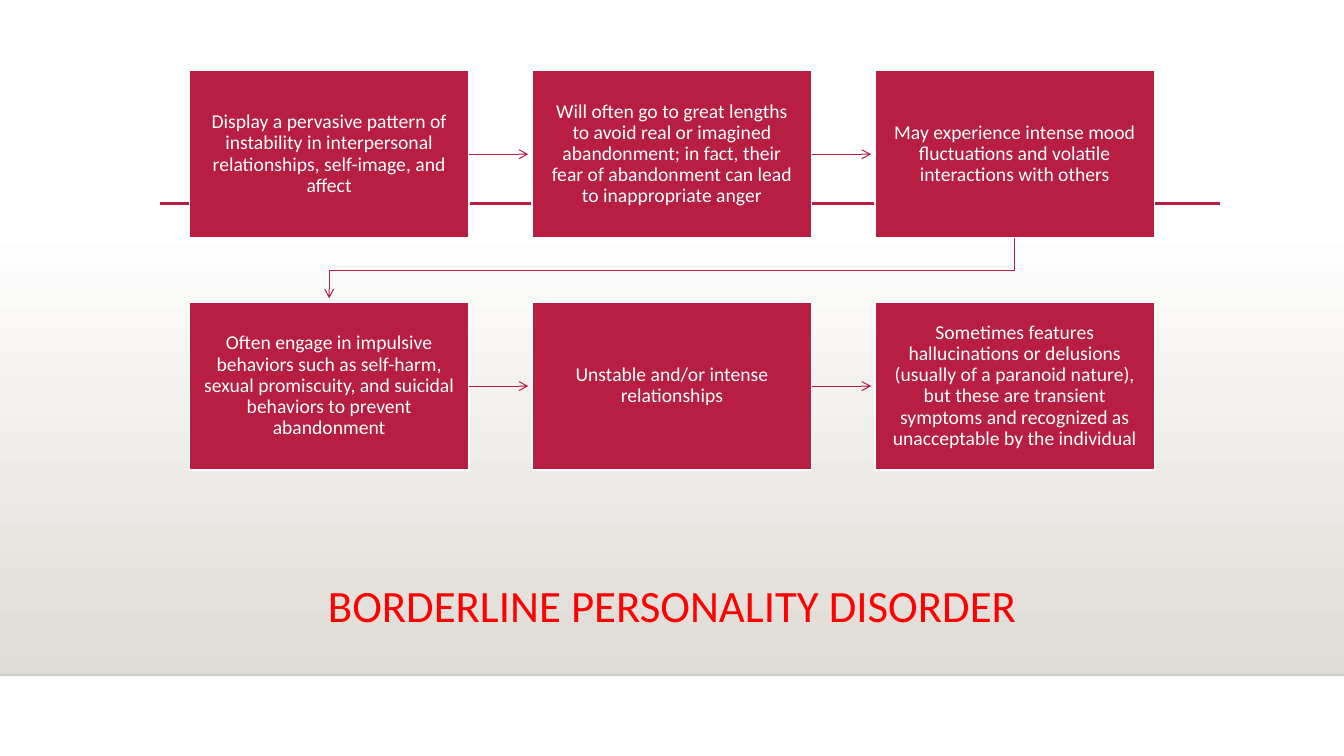
from lxml import etree
from pptx import Presentation
from pptx.dml.color import RGBColor
from pptx.enum.shapes import MSO_CONNECTOR as Connector, MSO_SHAPE as Shape
from pptx.enum.text import MSO_ANCHOR as Anchor, PP_ALIGN as Align
from pptx.oxml.ns import qn
from pptx.util import Inches, Pt

COLORS = {"crimson": "B71E42", "white": "FFFFFF", "stone": "DFDBD5",
          "edge": "000001", "title": "FF0000"}
FONT = "Calibri"
WIDTH, HEIGHT = 13.33, 7.5

# Grid of boxes
LEFT, TOP = 1.88, 0.7
COLUMN_STEP, ROW_STEP = 3.4, 2.3
BOX_WIDTH, BOX_HEIGHT = 2.77, 1.66
ARROW_GAP = 0.04
FLOOR = 6.7

FEATURES = [
    ["Display a pervasive pattern of instability in interpersonal "
     "relationships, self-image, and affect",
     "Will often go to great lengths to avoid real or imagined abandonment; "
     "in fact, their fear of abandonment can lead to inappropriate anger",
     "May experience intense mood fluctuations and volatile interactions "
     "with others"],
    ["Often engage in impulsive behaviors such as self-harm, sexual "
     "promiscuity, and suicidal behaviors to prevent abandonment",
     "Unstable and/or intense relationships",
     "Sometimes features hallucinations or delusions (usually of a paranoid "
     "nature), but these are transient symptoms and recognized as "
     "unacceptable by the individual"],
]


def color(name):
    return RGBColor.from_string(COLORS[name])


def style_line(line, name, width):
    line.color.rgb = color(name)
    line.width = Pt(width)


def add_arrowhead(line):
    outline = line._get_or_add_ln()
    etree.SubElement(outline, qn("a:tailEnd"), type="arrow")


def write(shape, text, size, name):
    shape.text_frame.word_wrap = True
    para = shape.text_frame.paragraphs[0]
    para.text = text
    para.alignment = Align.CENTER
    para.line_spacing = 0.9
    para.font.name = FONT
    para.font.size = Pt(size)
    para.font.color.rgb = color(name)


def add_line(page, start, end, name, width):
    line = page.shapes.add_connector(
        Connector.STRAIGHT, *(Inches(value) for value in (*start, *end)))
    etree.SubElement(line._element.spPr, qn("a:effectLst"))
    style_line(line.line, name, width)
    return line


def add_backdrop(page):
    top = 2.21
    floor = page.shapes.add_shape(
        Shape.RECTANGLE, 0, Inches(top), Inches(WIDTH), Inches(FLOOR - top))
    floor.shadow.inherit = False
    floor.line.fill.background()
    floor.fill.gradient()
    floor.fill.gradient_angle = 270
    for stop, name in zip(floor.fill.gradient_stops, ("white", "stone")):
        stop.color.rgb = color(name)

    edge = add_line(page, (0, FLOOR), (WIDTH, FLOOR), "edge", 1)
    tint = edge.line._get_or_add_ln().find(".//" + qn("a:srgbClr"))
    etree.SubElement(tint, qn("a:alpha"), val="20000")
    add_line(page, (1.59, 2.02), (12.1, 2.02), "crimson", 2.5)


def add_title(page, text):
    box = page.shapes.add_textbox(
        Inches(1.17), Inches(5.74), Inches(11), Inches(1.13))
    write(box, text, 32, "title")


def add_box(page, column, row, text):
    box = page.shapes.add_shape(
        Shape.RECTANGLE,
        Inches(LEFT + column * COLUMN_STEP), Inches(TOP + row * ROW_STEP),
        Inches(BOX_WIDTH), Inches(BOX_HEIGHT))
    box.shadow.inherit = False
    box.fill.solid()
    box.fill.fore_color.rgb = color("crimson")
    style_line(box.line, "white", 1.25)
    frame = box.text_frame
    frame.vertical_anchor = Anchor.MIDDLE
    frame.margin_left = frame.margin_right = Inches(0.14)
    frame.margin_top = frame.margin_bottom = Inches(0.14)
    write(box, text, 14, "white")
    return box


def add_step_arrow(page, box, column, row):
    y = TOP + row * ROW_STEP + BOX_HEIGHT / 2
    start = LEFT + column * COLUMN_STEP + BOX_WIDTH
    end = LEFT + (column + 1) * COLUMN_STEP - ARROW_GAP
    arrow = add_line(page, (start, y), (end, y), "crimson", 0.75)
    arrow.begin_connect(box, 3)
    add_arrowhead(arrow.line)


def add_return_arrow(page):
    first = LEFT + BOX_WIDTH / 2
    last = first + 2 * COLUMN_STEP
    bottom, next_top = TOP + BOX_HEIGHT, TOP + ROW_STEP
    middle = (bottom + next_top) / 2
    points = [(Inches(x), Inches(y)) for x, y in (
        (last, bottom), (last, middle), (first, middle),
        (first, next_top - ARROW_GAP))]
    builder = page.shapes.build_freeform(*points[0])
    builder.add_line_segments(points[1:], close=False)
    arrow = builder.convert_to_shape()
    arrow.shadow.inherit = False
    arrow.fill.background()
    style_line(arrow.line, "crimson", 0.75)
    add_arrowhead(arrow.line)


def main():
    deck = Presentation()
    deck.slide_width, deck.slide_height = Inches(WIDTH), Inches(HEIGHT)
    page = deck.slides.add_slide(deck.slide_layouts[6])

    add_backdrop(page)
    add_title(page, "BORDERLINE PERSONALITY DISORDER")

    # Boxes, each pointing to the next in its row
    for row, texts in enumerate(FEATURES):
        for column, text in enumerate(texts):
            box = add_box(page, column, row, text)
            if column < len(texts) - 1:
                add_step_arrow(page, box, column, row)
    add_return_arrow(page)

    deck.save("out.pptx")


if __name__ == "__main__":
    main()
